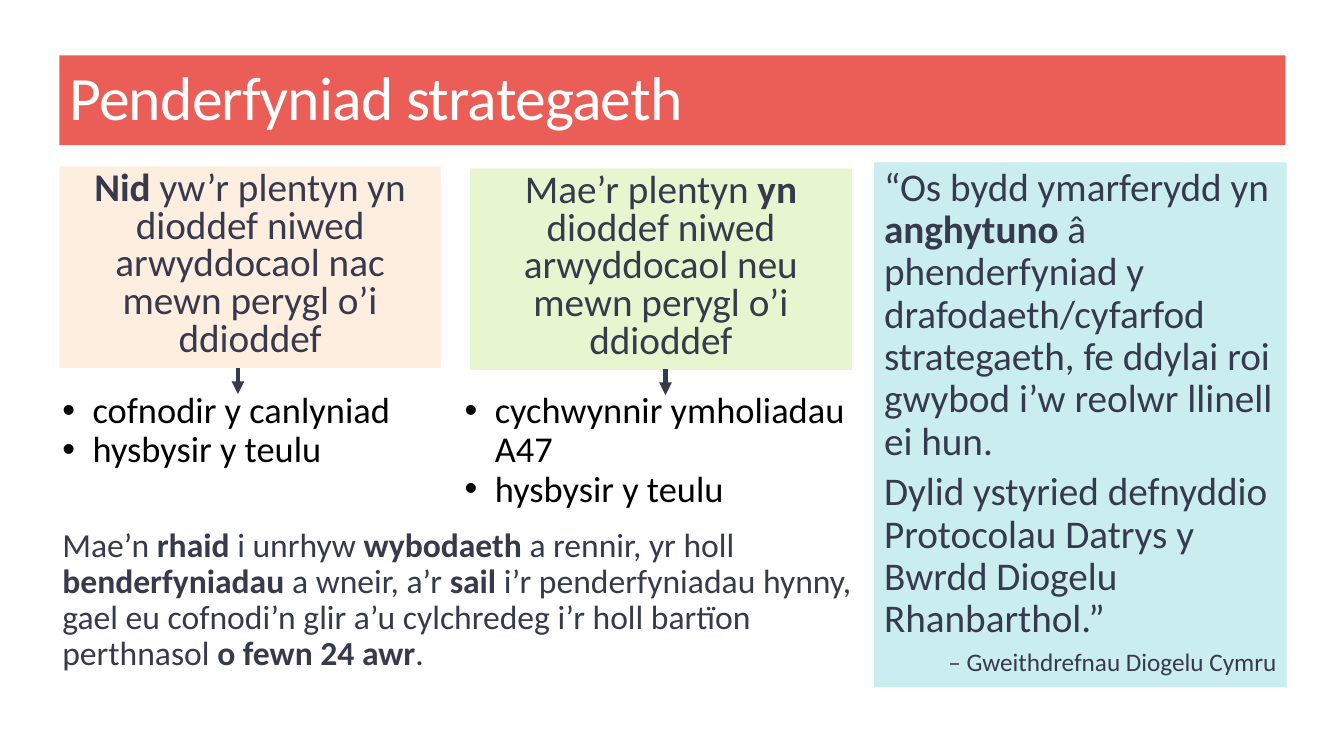
from dataclasses import dataclass
from typing import Optional

from lxml import etree
from pptx import Presentation
from pptx import util as u
from pptx.dml.color import RGBColor
from pptx.enum import shapes, text
from pptx.oxml.ns import qn

FONT = "Calibri"
INK, BLACK, WHITE = "37394C", "000000", "FFFFFF"
LEFT, CENTER, RIGHT = text.PP_ALIGN.LEFT, text.PP_ALIGN.CENTER, text.PP_ALIGN.RIGHT
BULLET_INDENT = 0.3


@dataclass
class Para:
    """One paragraph; the parts of content between asterisks are bold."""
    content: str
    size: float = 28
    align: text.PP_ALIGN = LEFT
    line_spacing: float = 0.9
    after: float = 0
    color: str = INK
    bullet: bool = False
    tracking: float = 0


@dataclass
class Box:
    left: float
    top: float
    width: float
    height: float
    paras: list[Para]
    fill: Optional[str] = None
    anchor: text.MSO_ANCHOR = text.MSO_ANCHOR.TOP


@dataclass
class Arrow:
    x: float
    top: float
    length: float = 0.26


def rgb(value: str) -> RGBColor:
    return RGBColor.from_string(value)


def add_bullet(p) -> None:
    pPr = p._p.get_or_add_pPr()
    pPr.set("marL", str(u.Inches(BULLET_INDENT)))
    pPr.set("indent", str(-u.Inches(BULLET_INDENT)))
    etree.SubElement(pPr, qn("a:buFont")).set("typeface", "Arial")
    etree.SubElement(pPr, qn("a:buChar")).set("char", "•")


def write_para(p, para: Para) -> None:
    p.alignment = para.align
    p.line_spacing = para.line_spacing
    p.space_after = u.Pt(para.after)
    if para.bullet:
        add_bullet(p)
    for i, part in enumerate(para.content.split("*")):
        if not part:
            continue
        r = p.add_run()
        r.text = part
        r.font.name = FONT
        r.font.size = u.Pt(para.size)
        r.font.bold = i % 2 == 1
        r.font.color.rgb = rgb(para.color)
        if para.tracking:
            r._r.get_or_add_rPr().set("spc", str(round(para.tracking * 100)))


def draw_box(s, box: Box) -> None:
    place = [u.Inches(v) for v in (box.left, box.top, box.width, box.height)]
    if box.fill:
        sp = s.shapes.add_shape(shapes.MSO_SHAPE.RECTANGLE, *place)
        sp.shadow.inherit = False
        sp.fill.solid()
        sp.fill.fore_color.rgb = rgb(box.fill)
        sp.line.fill.background()
    else:
        sp = s.shapes.add_textbox(*place)
    tf = sp.text_frame
    tf.word_wrap = True
    tf.vertical_anchor = box.anchor
    for i, para in enumerate(box.paras):
        write_para(tf.add_paragraph() if i else tf.paragraphs[0], para)


def draw_arrow(s, arrow: Arrow) -> None:
    x = u.Inches(arrow.x)
    c = s.shapes.add_connector(shapes.MSO_CONNECTOR.STRAIGHT, x, u.Inches(arrow.top),
                               x, u.Inches(arrow.top + arrow.length))
    c.line.color.rgb = rgb(INK)
    c.line.width = u.Pt(3)
    etree.SubElement(c.line._get_or_add_ln(), qn("a:tailEnd")).set("type", "triangle")
    etree.SubElement(c._element.spPr, qn("a:effectLst"))


def outcome(content: str) -> list[Para]:
    return [Para(content, align=CENTER, line_spacing=0.8)]


def actions(*items: str) -> list[Para]:
    return [Para(item, size=26, color=BLACK, bullet=True) for item in items]


BOXES = [
    Box(0.52, 3.84, 3.9, 1.01, actions("cofnodir y canlyniad", "hysbysir y teulu")),
    Box(8.67, 1.61, 4.09, 5.21, [
        Para("“Os bydd ymarferydd yn *anghytuno* â phenderfyniad y drafodaeth/cyfarfod "
             "strategaeth, fe ddylai roi gwybod i’w reolwr llinell ei hun.", after=6),
        Para("Dylid ystyried defnyddio Protocolau Datrys y Bwrdd Diogelu Rhanbarthol.”",
             after=6),
        Para("– Gweithdrefnau Diogelu Cymru", size=18, align=RIGHT, after=6),
    ], fill="CAEDF0"),
    Box(4.51, 3.84, 4.44, 1.01, actions("cychwynnir ymholiadau A47", "hysbysir y teulu")),
    Box(0.59, 1.65, 3.78, 2, outcome(
        "*Nid *yw’r plentyn yn dioddef niwed arwyddocaol nac mewn perygl o’i ddioddef"),
        fill="FDEEE0"),
    Box(4.66, 1.67, 3.79, 2, outcome(
        "Mae’r plentyn *yn *dioddef niwed arwyddocaol neu mewn perygl o’i ddioddef"),
        fill="E8F6CF"),
    Box(0.52, 5.19, 8.15, 1.56, [
        Para("Mae’n *rhaid *i unrhyw *wybodaeth* a rennir, yr holl *benderfyniadau* a wneir, "
             "a’r *sail *i’r penderfyniadau hynny, gael eu cofnodi’n glir a’u cylchredeg "
             "i’r holl bartïon perthnasol *o fewn 24 awr*.", size=24),
    ]),
    Box(0.59, 0.55, 12.16, 0.89,
        [Para("Penderfyniad strategaeth", size=44, color=WHITE, tracking=-0.6)],
        fill="EB5E57", anchor=text.MSO_ANCHOR.MIDDLE),
]
ARROWS = [Arrow(6.6, 3.66), Arrow(2.36, 3.65)]


def main() -> None:
    prs = Presentation()
    prs.slide_width, prs.slide_height = u.Inches(13.33), u.Inches(7.5)
    s = prs.slides.add_slide(prs.slide_layouts[6])
    for box in BOXES:
        draw_box(s, box)
    for arrow in ARROWS:
        draw_arrow(s, arrow)
    prs.save("out.pptx")


if __name__ == "__main__":
    main()
